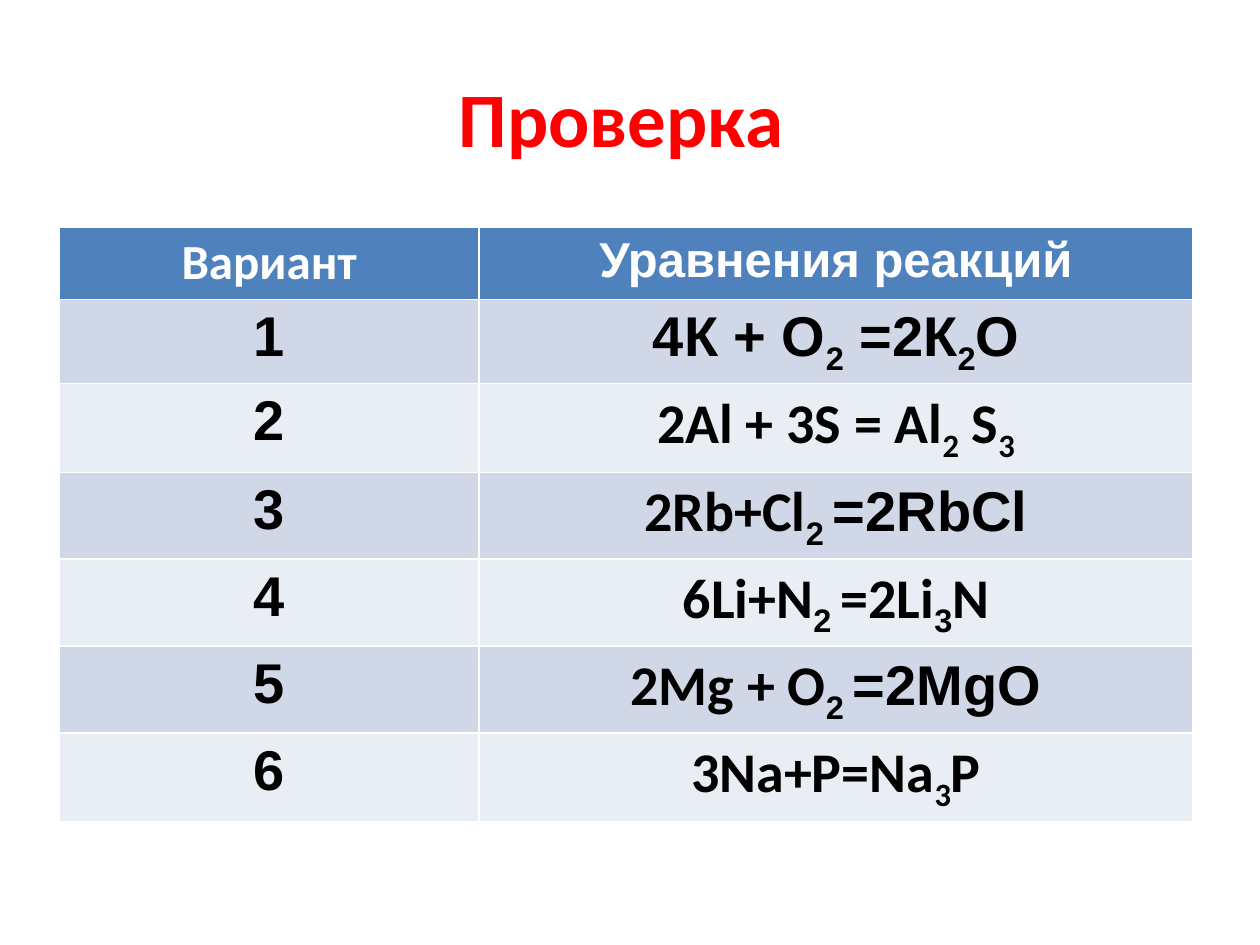
import pptx
import pptx.util
import pptx.dml.color
import pptx.enum.text

Inches = pptx.util.Inches
RGB = pptx.dml.color.RGBColor
RED = RGB(0xFF, 0x00, 0x00)
WHITE = RGB(0xFF, 0xFF, 0xFF)
BLACK = RGB(0x00, 0x00, 0x00)
BLUE = RGB(0x4F, 0x81, 0xBD)
BANDS = [RGB(0xE9, 0xED, 0xF4), RGB(0xD0, 0xD8, 0xE8)]
CENTER = pptx.enum.text.PP_ALIGN.CENTER
MIDDLE = pptx.enum.text.MSO_ANCHOR.MIDDLE

ARIAL, CAL = "Arial", "Calibri"
SUB = "-25000"
HEADS = [[("Вариант", CAL)], [("Уравнения реакций", ARIAL)]]
SUMS = [
    [("4К + О", ARIAL), ("2", ARIAL, SUB), (" =2К", ARIAL),
     ("2", ARIAL, SUB), ("О", ARIAL)],
    [("2Al + 3S = Al", CAL), ("2", CAL, SUB), (" S", CAL), ("3", CAL, SUB)],
    [("2Rb+Cl", CAL), ("2 ", ARIAL, SUB), ("=2RbCl", ARIAL)],
    [("6Li+N", CAL), ("2 ", ARIAL, SUB), ("=2Li", CAL),
     ("3", ARIAL, SUB), ("N", CAL)],
    [("2Mg + О", CAL), ("2 ", ARIAL, SUB), ("=2MgО", ARIAL)],
    [("3Na+P=Na", CAL), ("3", CAL, SUB), ("P", CAL)],
]


def write(frame, runs, size, color):
    """Fill a text frame with one centred line of bold runs."""
    line = frame.paragraphs[0]
    line.alignment = CENTER
    for text, face, *base in runs:
        run = line.add_run()
        run.text = text
        form = {"name": face, "size": pptx.util.Pt(size), "bold": True}
        for key, value in form.items():
            setattr(run.font, key, value)
        run.font.color.rgb = color
        if base:
            run._r.get_or_add_rPr().set("baseline", base[0])


def add_title(slide, box):
    """Place the red heading in the title placeholder."""
    title = slide.shapes.title
    for key, value in zip(("left", "top", "width", "height"), box):
        setattr(title, key, value)
    title.text_frame.vertical_anchor = MIDDLE
    write(title.text_frame, [("Проверка ", CAL)], 44, RED)


def add_grid(slide, box):
    """Place the table of variants and reaction equations."""
    rows = [HEADS] + [[[(str(n), ARIAL)], runs]
                      for n, runs in enumerate(SUMS, 1)]
    frame = slide.shapes.add_table(len(rows), 2, *box)
    table = frame.table
    table.columns[0].width = Inches(3.33)
    table.columns[1].width = box[2] - Inches(3.33)
    for r, row in enumerate(rows):
        table.rows[r].height = Inches(0.41)
        size, color, fill = (32, BLACK, BANDS[r % 2]) if r else (28, WHITE, BLUE)
        for c, runs in enumerate(row):
            cell = table.cell(r, c)
            cell.fill.solid()
            cell.fill.fore_color.rgb = fill
            write(cell.text_frame, runs, size, color)
    frame.height = box[3]


def main():
    """Build and save the slide."""
    deck = pptx.Presentation()
    deck.slide_width, deck.slide_height = Inches(10), Inches(7.5)
    slide = deck.slides.add_slide(deck.slide_layouts[5])
    add_title(slide, [Inches(v) for v in (0.5, 0.3, 9, 1.25)])
    add_grid(slide, [Inches(v) for v in (0.47, 1.8, 9, 4.37)])
    deck.save("out.pptx")


if __name__ == "__main__":
    main()
